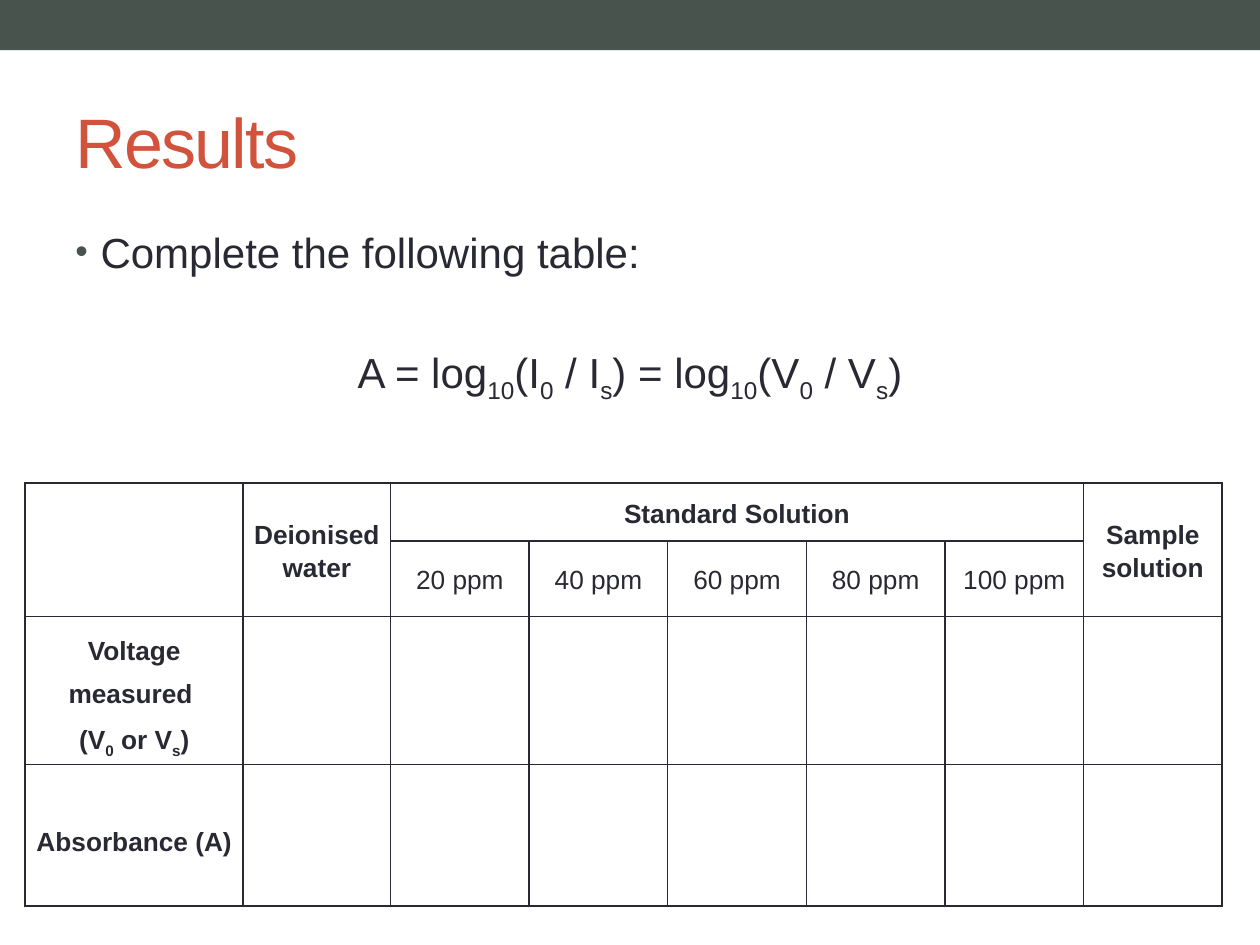
from dataclasses import dataclass

import pptx
import pptx.dml.color
import pptx.enum.shapes
import pptx.enum.text
import pptx.oxml
import pptx.oxml.ns
import pptx.util

Align = pptx.enum.text.PP_ALIGN
Anchor = pptx.enum.text.MSO_ANCHOR
Inches = pptx.util.Inches
Pt = pptx.util.Pt


@dataclass(frozen=True)
class Theme:
    font: str = "Arial"
    bar: str = "47534C"
    title: str = "D2533C"
    ink: str = "292934"
    title_size: int = 40
    body_size: int = 24
    table_size: int = 15


@dataclass(frozen=True)
class Box:
    left: float
    top: float
    width: float
    height: float

    def lengths(self) -> list[int]:
        return [Inches(share * side) for share, side in zip(
            (self.left, self.top, self.width, self.height),
            (SLIDE_WIDTH, SLIDE_HEIGHT) * 2)]


@dataclass(frozen=True)
class Entry:
    row: int
    column: int
    text: str
    rows: int = 1
    columns: int = 1
    bold: bool = True
    line_spacing: float = 1.15


THEME = Theme()
SLIDE_WIDTH, SLIDE_HEIGHT = 10, 7.5
COLUMN_WIDTHS = [1.73, 1.17] + [1.1] * 6
ROW_HEIGHTS = [0.46, 0.6, 1.09, 1.12]
CONCENTRATIONS = [20, 40, 60, 80, 100]
ENTRIES = [
    Entry(0, 0, "", rows=2),
    Entry(0, 1, "Deionised water", rows=2),
    Entry(0, 2, "Standard Solution", columns=len(CONCENTRATIONS)),
    Entry(0, 7, "Sample solution", rows=2),
    *[Entry(1, column, f"{amount} ppm", bold=False)
      for column, amount in enumerate(CONCENTRATIONS, start=2)],
    Entry(2, 0, "Voltage measured \n(V|0| or V|s|)", line_spacing=1.5),
    Entry(3, 0, "Absorbance (A)", line_spacing=1.5),
]


def write(paragraph, text: str, size: int, color: str, bold: bool = False) -> None:
    """Write text in which bars enclose subscripts."""
    for line_number, line in enumerate(text.split("\n")):
        if line_number:
            paragraph.add_line_break()
        for position, piece in enumerate(line.split("|")):
            if not piece:
                continue
            run = paragraph.add_run()
            run.text = piece
            run.font.name = THEME.font
            run.font.size = Pt(size)
            run.font.bold = bold
            run.font.color.rgb = pptx.dml.color.RGBColor.from_string(color)
            if position % 2:
                run.font._element.set("baseline", "-25000")


def add_xml(parent, tag: str, content: str = "", attributes: str = "") -> None:
    namespace = pptx.oxml.ns.nsdecls("a")
    parent.append(pptx.oxml.parse_xml(
        f"<a:{tag} {namespace} {attributes}>{content}</a:{tag}>"))


def add_text_frame(slide, box: Box, anchor):
    text_frame = slide.shapes.add_textbox(*box.lengths()).text_frame
    text_frame.word_wrap = True
    text_frame.vertical_anchor = anchor
    return text_frame


def add_bar(slide, box: Box) -> None:
    shape = slide.shapes.add_shape(
        pptx.enum.shapes.MSO_SHAPE.RECTANGLE, *box.lengths())
    shape.shadow.inherit = False
    shape.fill.solid()
    shape.fill.fore_color.rgb = pptx.dml.color.RGBColor.from_string(THEME.bar)
    shape.line.fill.background()


def add_title(slide, box: Box) -> None:
    paragraph = add_text_frame(slide, box, Anchor.MIDDLE).paragraphs[0]
    write(paragraph, "Results", THEME.title_size, THEME.title)
    paragraph.runs[0].font._element.set("spc", "-100")


def add_body(slide, box: Box) -> None:
    text_frame = add_text_frame(slide, box, Anchor.TOP)
    instruction = text_frame.paragraphs[0]
    instruction.space_before = Pt(2.5)
    properties = instruction._p.get_or_add_pPr()
    properties.set("marL", str(Inches(0.2)))
    properties.set("indent", str(-Inches(0.2)))
    add_xml(properties, "buClr", f'<a:srgbClr val="{THEME.bar}"/>')
    add_xml(properties, "buSzPct", attributes='val="85000"')
    add_xml(properties, "buFont", attributes=f'typeface="{THEME.font}"')
    add_xml(properties, "buChar", attributes='char="•"')
    write(instruction, "Complete the following table:", THEME.body_size, THEME.ink)

    formula = text_frame.add_paragraph()
    formula.alignment = Align.CENTER
    formula.space_before = Pt(40)
    write(formula, "A = log|10|(I|0| / I|s|) = log|10|(V|0| / V|s|)",
          THEME.body_size, THEME.ink)


def style_cell(cell) -> None:
    cell.margin_left = cell.margin_right = Inches(0.07)
    cell.margin_top = cell.margin_bottom = 0
    cell.vertical_anchor = Anchor.MIDDLE
    properties = cell._tc.get_or_add_tcPr()
    for side in "LRTB":
        add_xml(properties, f"ln{side}",
                f'<a:solidFill><a:srgbClr val="{THEME.ink}"/></a:solidFill>',
                f'w="{Pt(1)}"')
    cell.fill.background()


def add_results_table(slide, box: Box) -> None:
    table = slide.shapes.add_table(
        len(ROW_HEIGHTS), len(COLUMN_WIDTHS), *box.lengths()).table
    table.first_row = table.horz_banding = False
    for column, width in zip(table.columns, COLUMN_WIDTHS):
        column.width = Inches(width)
    for row, height in zip(table.rows, ROW_HEIGHTS):
        row.height = Inches(height)
    for cell in table.iter_cells():
        style_cell(cell)
    for entry in ENTRIES:
        cell = table.cell(entry.row, entry.column)
        if entry.rows * entry.columns > 1:
            cell.merge(table.cell(entry.row + entry.rows - 1,
                                  entry.column + entry.columns - 1))
        paragraph = cell.text_frame.paragraphs[0]
        paragraph.alignment = Align.CENTER
        paragraph.line_spacing = entry.line_spacing
        write(paragraph, entry.text, THEME.table_size, THEME.ink, entry.bold)


def main() -> None:
    presentation = pptx.Presentation()
    presentation.slide_width = Inches(SLIDE_WIDTH)
    presentation.slide_height = Inches(SLIDE_HEIGHT)
    slide = presentation.slides.add_slide(presentation.slide_layouts[6])
    add_bar(slide, Box(0, 0, 1, 0.053))
    add_title(slide, Box(0.05, 0.077, 0.9, 0.144))
    add_body(slide, Box(0.05, 0.233, 0.9, 0.711))
    add_results_table(slide, Box(0.02, 0.511, 0.95, 0.436))
    presentation.save("out.pptx")


if __name__ == "__main__":
    main()
